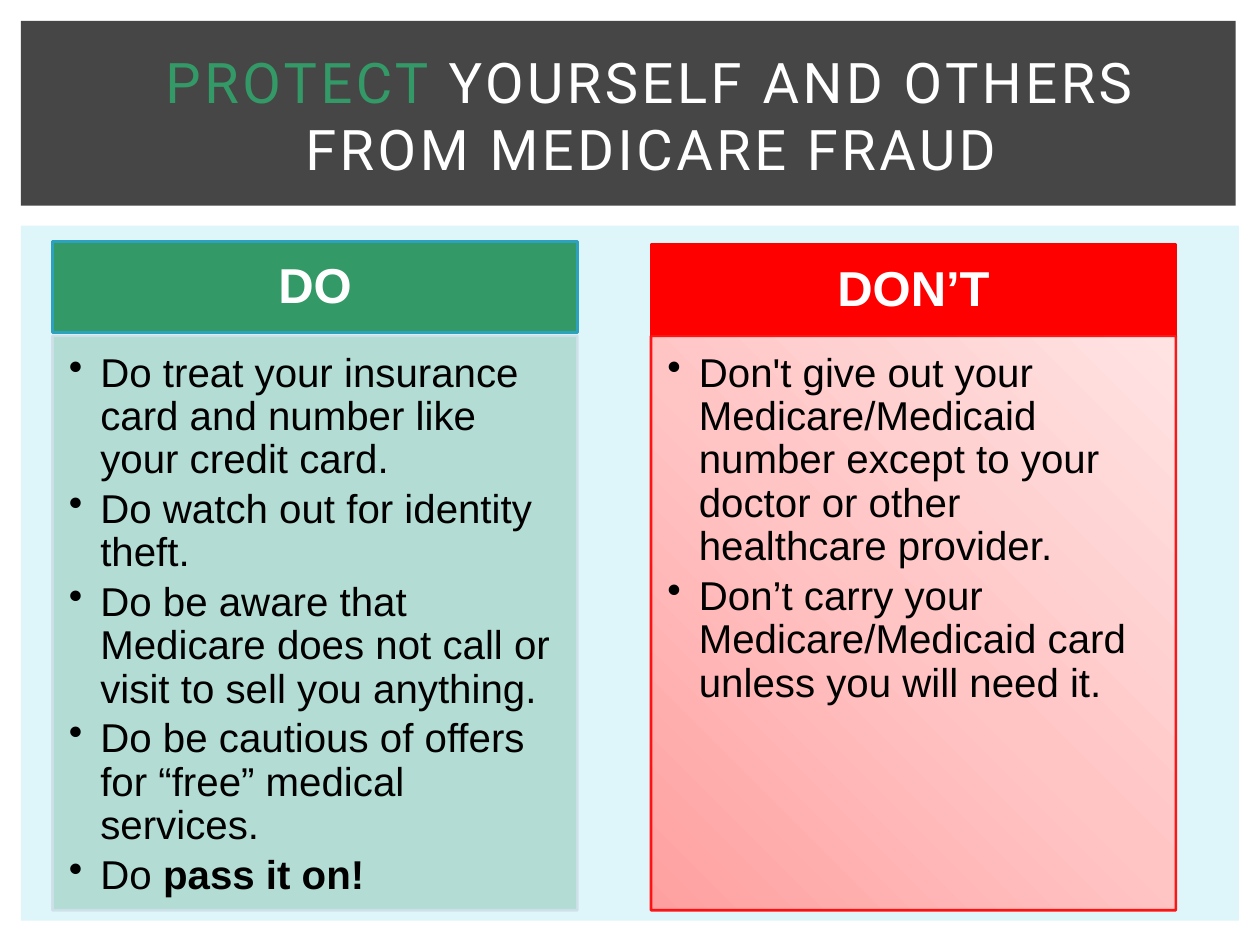
"""Build a slide of dos and don'ts against Medicare fraud."""
from copy import deepcopy
from dataclasses import dataclass
from lxml import etree
from pptx import Presentation
from pptx.dml.color import RGBColor
from pptx.enum.shapes import MSO_SHAPE
from pptx.enum.text import MSO_ANCHOR, MSO_AUTO_SIZE, PP_ALIGN
from pptx.oxml.ns import qn
from pptx.util import Inches, Pt

RECT = MSO_SHAPE.RECTANGLE
MID, TOP = MSO_ANCHOR.MIDDLE, MSO_ANCHOR.TOP
MIDDLE, LEFT = PP_ALIGN.CENTER, PP_ALIGN.LEFT
FIXED = MSO_AUTO_SIZE.NONE


@dataclass(frozen=True)
class Theme:
    pale: str = "DEF5FA"
    dark: str = "464646"
    green: str = "339966"
    blue: str = "2DA2BF"
    mist: str = "CDE0E8"
    red: str = "FF0000"
    white: str = "FFFFFF"
    black: str = "000000"
    blush: tuple = ((0, "FFA0A0"), (0.5, "FFC5C5"), (1, "FFE3E3"))
    title: int = 32
    head: int = 28
    body: float = 23
    face: str = "Arial"
    caps: str = "Roboto"


theme = Theme()
deck = Presentation()
deck.slide_width, deck.slide_height = Inches(10), Inches(7.5)
slide = deck.slides.add_slide(deck.slide_layouts[5])
COL, ROW = deck.slide_width / 120, deck.slide_height / 90


def box(x, y, w, h, fill, line=None, clear=None, fade=None):
    shape = slide.shapes.add_shape(RECT, *(round(n) for n in (x * COL, y * ROW, w * COL, h * ROW)))
    shape.shadow.inherit = False
    if isinstance(fill, tuple):
        shape.fill.gradient()
        shape.fill.gradient_angle = 45
        first = next(shape._element.iter(qn("a:gs")))
        first.addnext(deepcopy(first))
        for stop, (spot, tone) in zip(shape.fill.gradient_stops, fill):
            stop.position = spot
            stop.color.rgb = RGBColor.from_string(tone)
    else:
        shape.fill.solid()
        shape.fill.fore_color.rgb = RGBColor.from_string(fill)
    if line:
        shape.line.color.rgb = RGBColor.from_string(line)
        shape.line.width = Pt(1.5)
    else:
        shape.line.fill.background()
    fills = shape._element.spPr.findall(qn("a:solidFill"))
    edges = shape._element.spPr.findall(qn("a:ln") + "/" + qn("a:solidFill"))
    for nodes, share in ((fills, clear), (edges, fade)):
        if share and nodes:
            etree.SubElement(nodes[0][0], qn("a:alpha"), val=str(share * 1000))
    return shape


def write(shape, paras, size, face, align=LEFT, anchor=TOP, pads=(0.1, 0.05, 0.1, 0.05),
          lead=1.0, after=0, bullet=None, track=0):
    frame = shape.text_frame
    frame.word_wrap, frame.auto_size, frame.vertical_anchor = True, FIXED, anchor
    (frame.margin_left, frame.margin_top,
     frame.margin_right, frame.margin_bottom) = (Inches(pad) for pad in pads)
    for at, runs in enumerate(paras):
        para = frame.add_paragraph() if at else frame.paragraphs[0]
        para.alignment, para.line_spacing = align, lead
        para.space_before, para.space_after = Pt(0), Pt(after)
        if bullet:
            props = para._p.get_or_add_pPr()
            props.set("marL", str(Inches(0.25)))
            props.set("indent", str(-Inches(0.25)))
            etree.SubElement(props, qn("a:buChar"), char=bullet)
        for text, tone, bold in runs:
            run = para.add_run()
            run.text = text
            run.font.size, run.font.name, run.font.bold = Pt(size), face, bold
            run.font.color.rgb = RGBColor.from_string(tone)
            if track:
                run._r.get_or_add_rPr().set("spc", str(track * 100))


box(2, 21.5, 116, 66.2, theme.pale)
box(2, 2, 115.7, 17.6, theme.dark)

title = slide.shapes.title
slide.shapes._spTree.append(title._element)
title.left, title.top = round(7 * COL), round(4 * ROW)
title.width, title.height = round(110 * COL), round(13.8 * ROW)
write(title, [[("PROTECT ", theme.green, False),
               ("YOURSELF AND OTHERS FROM MEDICARE FRAUD", theme.white, False)]],
      theme.title, theme.caps, align=MIDDLE, anchor=MID, track=2)

dos = [
    ("Do treat your insurance card and number like your credit card.",),
    ("Do watch out for identity theft.",),
    ("Do be aware that Medicare does not call or visit to sell you anything.",),
    ("Do be cautious of offers for “free” medical services.",),
    ("Do ", "pass it on!"),
]
donts = [
    ("Don't give out your Medicare/Medicaid number except to your doctor or other "
     "healthcare provider.",),
    ("Don’t carry your Medicare/Medicaid card unless you will need it.",),
]
lists = [
    ("DO", 5, 23, theme.green, theme.blue, theme.green, theme.mist, 25, dos),
    ("DON’T", 62, 23.3, theme.red, theme.red, theme.blush, theme.red, None, donts),
]
for name, x, y, fill, rim, tint, edge, clear, items in lists:
    head = box(x, y, 50, 8.7, fill, rim)
    write(head, [[(name, theme.white, True)]], theme.head, theme.face, align=MIDDLE,
          anchor=MID, pads=(0.22, 0.12, 0.22, 0.12), lead=0.9)
    body = box(x, 32, 50, 54.7, tint, edge, clear, 90)
    paras = [[(part, theme.black, at > 0) for at, part in enumerate(item)] for item in items]
    write(body, paras, theme.body, theme.face, pads=(0.13, 0.13, 0.18, 0.2),
          lead=0.9, after=theme.body * 0.15, bullet="•")

deck.save("out.pptx")
